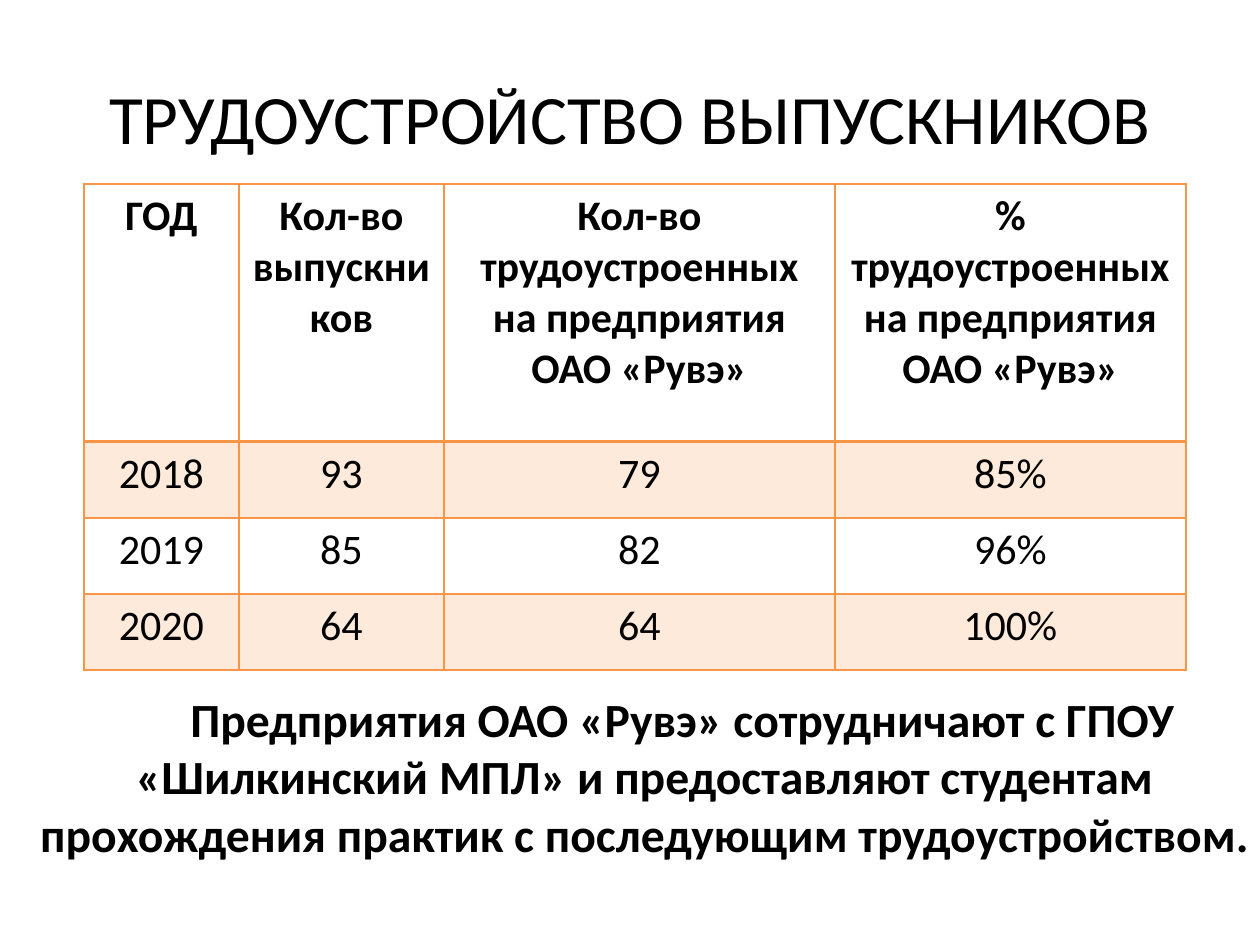
from dataclasses import dataclass

from lxml.etree import SubElement
from pptx import Presentation
from pptx.dml.color import RGBColor
from pptx.enum.text import MSO_ANCHOR, MSO_AUTO_SIZE, PP_ALIGN
from pptx.oxml import parse_xml
from pptx.oxml.ns import nsdecls, qn
from pptx.util import Emu, Pt

PX_PER_INCH = 126
BLACK = RGBColor(0x00, 0x00, 0x00)
ORANGE = RGBColor(0xF7, 0x96, 0x46)
FONT = "Calibri"
BAND_ALPHA = 20000


@dataclass(frozen=True)
class Box:
    left: int
    top: int
    width: int
    height: int


@dataclass(frozen=True)
class TextStyle:
    size: float
    bold: bool = False


TITLE = TextStyle(39.6)
HEADER = TextStyle(24, bold=True)
VALUE = TextStyle(24)
SUMMARY = TextStyle(27.2, bold=True)

TITLE_BOX = Box(63, 38, 1134, 158)
TABLE_BOX = Box(84, 184, 1102, 486)
SUMMARY_BOX = Box(15, 684, 1260, 178)
SUMMARY_INDENT = 75

COLUMN_WIDTHS = (155, 205, 391, 351)
ROW_HEIGHTS = (258, 76, 76, 76)
ROWS = (
    ("ГОД", "Кол-во выпускников",
     "Кол-во трудоустроенных на предприятия ОАО «Рувэ»",
     "% трудоустроенных на предприятия ОАО «Рувэ»"),
    ("2018", "93", "79", "85%"),
    ("2019", "85", "82", "96%"),
    ("2020", "64", "64", "100%"),
)


def px(length: int) -> Emu:
    return Emu(round(length * 914400 / PX_PER_INCH))


def frame(box: Box) -> tuple[Emu, Emu, Emu, Emu]:
    return px(box.left), px(box.top), px(box.width), px(box.height)


def write(text_frame, text: str, style: TextStyle):
    paragraph = text_frame.paragraphs[0]
    paragraph.alignment = PP_ALIGN.CENTER
    run = paragraph.add_run()
    run.text = text
    run.font.name = FONT
    run.font.size = Pt(style.size)
    run.font.bold = style.bold
    run.font.color.rgb = BLACK
    return paragraph


def add_border(cell, side: str, points: int) -> None:
    cell._tc.get_or_add_tcPr().append(parse_xml(
        f'<a:{side} {nsdecls("a")} w="{Pt(points)}"><a:solidFill>'
        f'<a:srgbClr val="{ORANGE}"/></a:solidFill></a:{side}>'))


def draw_cell(cell, text: str, row: int) -> None:
    write(cell.text_frame, text, VALUE if row else HEADER)
    # The rule between header and values is thicker
    for side, heavy_row in (("lnL", None), ("lnR", None), ("lnT", 1), ("lnB", 0)):
        add_border(cell, side, 2 if row == heavy_row else 1)
    if row % 2:
        cell.fill.solid()
        cell.fill.fore_color.rgb = ORANGE
        tint = cell._tc.tcPr.find(f"{qn('a:solidFill')}/{qn('a:srgbClr')}")
        SubElement(tint, qn("a:alpha"), val=str(BAND_ALPHA))
    else:
        cell.fill.background()


def draw_table(slide) -> None:
    table = slide.shapes.add_table(
        len(ROWS), len(COLUMN_WIDTHS), *frame(TABLE_BOX)).table
    table.first_row = False
    table.horz_banding = False
    for column, width in zip(table.columns, COLUMN_WIDTHS):
        column.width = px(width)
    for row, height in zip(table.rows, ROW_HEIGHTS):
        row.height = px(height)
    for row, texts in enumerate(ROWS):
        for column, text in enumerate(texts):
            draw_cell(table.cell(row, column), text, row)


def main() -> None:
    presentation = Presentation()
    presentation.slide_width = px(1260)
    presentation.slide_height = px(945)
    slide = presentation.slides.add_slide(presentation.slide_layouts[5])

    # Title
    title = slide.shapes.title
    title.left, title.top, title.width, title.height = frame(TITLE_BOX)
    title.text_frame.auto_size = MSO_AUTO_SIZE.NONE
    title.text_frame.vertical_anchor = MSO_ANCHOR.MIDDLE
    write(title.text_frame, "ТРУДОУСТРОЙСТВО ВЫПУСКНИКОВ", TITLE)

    # Employment by year
    draw_table(slide)

    # Summary with an indented first line
    summary = slide.shapes.add_textbox(*frame(SUMMARY_BOX)).text_frame
    summary.word_wrap = True
    paragraph = write(
        summary,
        "Предприятия ОАО «Рувэ» сотрудничают с ГПОУ «Шилкинский МПЛ» "
        "и предоставляют студентам прохождения практик "
        "с последующим трудоустройством.",
        SUMMARY)
    paragraph._p.get_or_add_pPr().set("indent", str(px(SUMMARY_INDENT)))

    presentation.save("out.pptx")


if __name__ == "__main__":
    main()
